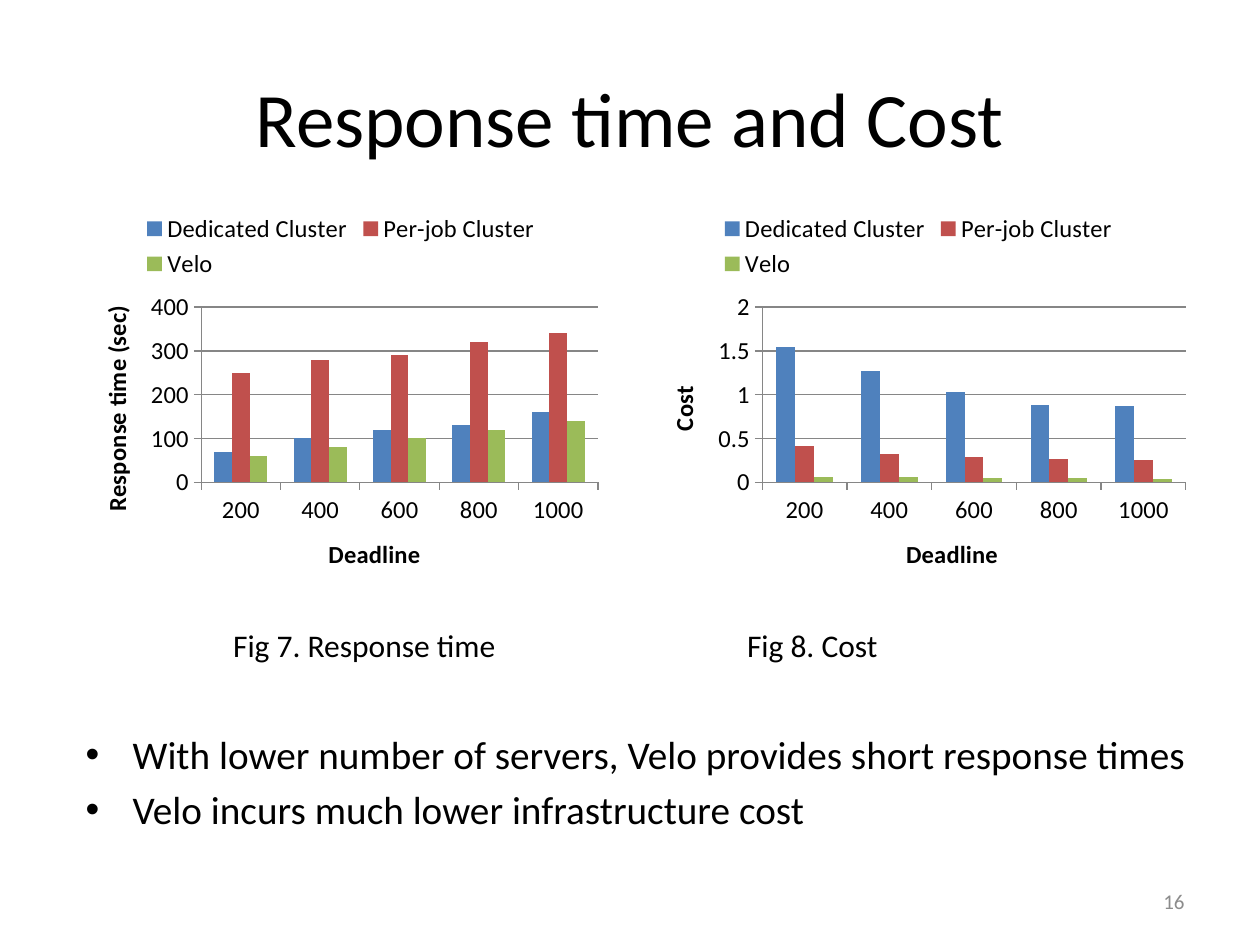
from pptx import Presentation
from pptx import util as u
from pptx.chart.data import CategoryChartData
from pptx.dml.color import RGBColor
from pptx.enum import chart as kinds, text

FONT = "Calibri"
BLACK, GREY, GRID = "000000", "8C8C8C", "868686"
DEADLINES = ["200", "400", "600", "800", "1000"]
CLUSTERS = {"Dedicated Cluster": "4F81BD", "Per-job Cluster": "C0504D", "Velo": "9BBB59"}
RESPONSE_TIMES = [
    [70, 100, 120, 130, 160],
    [250, 280, 290, 320, 340],
    [60, 80, 100, 120, 140],
]
COSTS = [
    [1.54, 1.27, 1.03, 0.88, 0.87],
    [0.41, 0.32, 0.29, 0.27, 0.25],
    [0.06, 0.06, 0.05, 0.05, 0.04],
]


def colour(value):
    return RGBColor.from_string(value)


def set_font(font, size, value=BLACK, bold=False):
    font.name, font.size, font.bold = FONT, u.Pt(size), bold
    font.color.rgb = colour(value)


def place(shape, left, top, width, height):
    shape.left, shape.top = u.Cm(left), u.Cm(top)
    shape.width, shape.height = u.Cm(width), u.Cm(height)


def add_title(page, box, words):
    title = page.shapes.title
    place(title, *box)
    title.text = words
    para = title.text_frame.paragraphs[0]
    para.alignment = text.PP_ALIGN.CENTER
    set_font(para.font, 44)


def add_points(page, box, points):
    body = page.placeholders[1]
    place(body, *box)
    body.text_frame.text = "\n".join(points)
    body.text_frame.auto_size = text.MSO_AUTO_SIZE.NONE
    for para in body.text_frame.paragraphs:
        set_font(para.font, 22.4)
        properties = para._p.get_or_add_pPr()
        properties.set("marL", str(u.Cm(0.95)))
        properties.set("indent", str(-u.Cm(0.95)))


def add_label(page, box, words, size, value=BLACK, alignment=text.PP_ALIGN.LEFT,
              anchor=text.MSO_ANCHOR.TOP):
    label = page.shapes.add_textbox(*map(u.Cm, box))
    frame = label.text_frame
    frame.word_wrap = True
    frame.vertical_anchor = anchor
    para = frame.paragraphs[0]
    para.text = words
    para.alignment = alignment
    set_font(para.font, size, value)


def style_axis(axis, title):
    axis.has_title = True
    axis.axis_title.text_frame.text = title
    set_font(axis.axis_title.text_frame.paragraphs[0].font, 14, bold=True)
    axis.major_tick_mark = kinds.XL_TICK_MARK.OUTSIDE
    axis.format.line.color.rgb = colour(GRID)


def add_column_chart(page, box, value_title, rows, maximum):
    """Clustered columns by deadline, with four steps on the value axis."""
    data = CategoryChartData()
    data.categories = DEADLINES
    for name, values in zip(CLUSTERS, rows):
        data.add_series(name, values)
    chart = page.shapes.add_chart(
        kinds.XL_CHART_TYPE.COLUMN_CLUSTERED, *map(u.Cm, box), data).chart
    set_font(chart.font, 14)
    chart.has_title = False
    chart.has_legend = True
    chart.legend.position = kinds.XL_LEGEND_POSITION.TOP
    chart.legend.include_in_layout = False

    plot = chart.plots[0]
    plot.gap_width, plot.overlap = 150, 0
    plot.vary_by_categories = False
    for series, value in zip(plot.series, CLUSTERS.values()):
        series.format.fill.solid()
        series.format.fill.fore_color.rgb = colour(value)

    style_axis(chart.category_axis, "Deadline")
    axis = chart.value_axis
    style_axis(axis, value_title)
    axis.minimum_scale, axis.maximum_scale = 0, maximum
    axis.major_unit = maximum / 4
    axis.has_major_gridlines = True
    axis.major_gridlines.format.line.color.rgb = colour(GRID)
    frame_properties = axis.axis_title._element.xpath(".//a:bodyPr")[0]
    frame_properties.set("rot", "-5400000")
    frame_properties.set("vert", "horz")


def main():
    deck = Presentation()
    deck.slide_width, deck.slide_height = u.Cm(25.4), u.Cm(19.05)
    page = deck.slides.add_slide(deck.slide_layouts[1])
    add_title(page, (1.27, 0.76, 22.86, 3.18), "Response time and Cost")
    add_points(page, (1.47, 14.6, 22.86, 2.84), [
        "With lower number of servers, Velo provides short response times",
        "Velo incurs much lower infrastructure cost",
    ])
    add_column_chart(page, (1.47, 4.02, 10.8, 8.05), "Response time (sec)", RESPONSE_TIMES, 400)
    add_column_chart(page, (12.9, 4.02, 11.23, 8.05), "Cost", COSTS, 2)
    for left, caption in ((4.45, "Fig 7. Response time"), (14.81, "Fig 8. Cost")):
        add_label(page, (left, 12.5, 7.2, 1.02), caption, 18)
    add_label(page, (18.2, 17.65, 5.93, 1.02), "16", 12, GREY,
              text.PP_ALIGN.RIGHT, text.MSO_ANCHOR.MIDDLE)
    deck.save("out.pptx")


if __name__ == "__main__":
    main()
